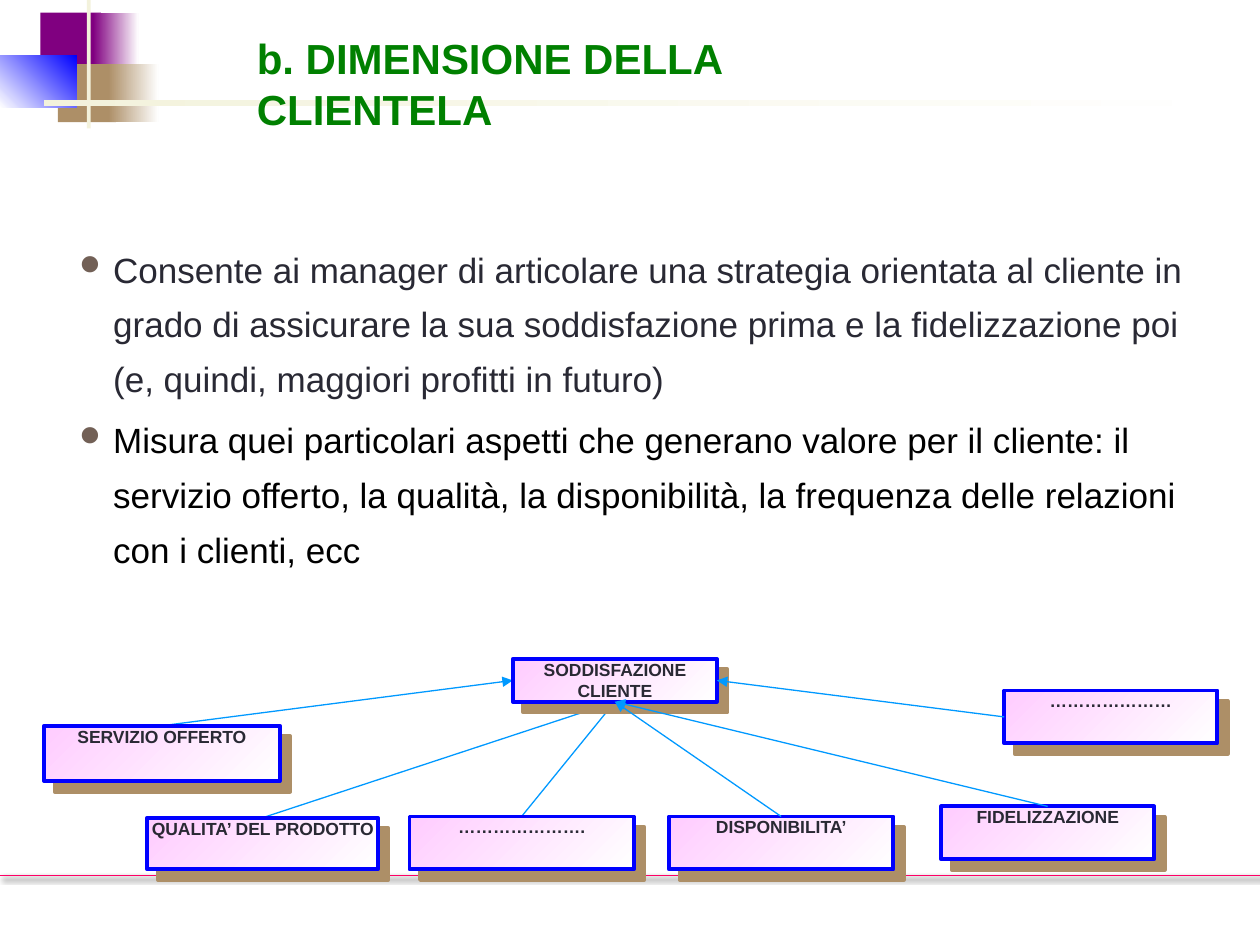
from lxml import etree
from pptx import Presentation
from pptx.dml.color import RGBColor
from pptx.enum import shapes, text
from pptx.oxml import parse_xml
from pptx.oxml.ns import nsdecls, qn
from pptx.util import Inches, Pt

TITLE = "b. DIMENSIONE DELLA CLIENTELA"
POINTS = [
    ("Consente ai manager di articolare una strategia orientata al cliente in grado di "
     "assicurare la sua soddisfazione prima e la fidelizzazione poi (e, quindi, maggiori "
     "profitti in futuro)", "292934", 0),
    ("Misura quei particolari aspetti che generano valore per il cliente: il servizio "
     "offerto, la qualità, la disponibilità, la frequenza delle relazioni con i clienti, ecc",
     "000000", 4),
]
# left, top, width, height, fill colours, gradient angle (clockwise)
ORNAMENTS = [
    (0.32, 0.1, 0.48, 0.46, ["800080"], 0),
    (0.74, 0.1, 0.36, 0.46, ["800080", "FFFFFF"], 0),
    (0.46, 0.51, 0.46, 0.46, ["AD8F67"], 0),
    (0.86, 0.51, 0.4, 0.46, ["AD8F67", "FFFFFF"], 0),
    (0, 0.44, 0.61, 0.41, ["FFFFFF", "0000FF"], 315),
    (0.69, 0, 0.03, 1.02, ["F3F2DC"], 0),
    (0.35, 0.79, 9.51, 0.05, ["F3F2DC", "FFFFFF"], 0),
]
GOAL = ("SODDISFAZIONE CLIENTE", 4.07, 5.23, 1.62, 0.34)
SERVICE = ("SERVIZIO OFFERTO", 0.35, 5.76, 1.87, 0.44)
QUALITY = ("QUALITA’ DEL PRODOTTO", 1.17, 6.49, 1.83, 0.41)
OPEN_LOW = ("………………….", 3.25, 6.48, 1.78, 0.42)
AVAILABILITY = ("DISPONIBILITA’", 5.31, 6.48, 1.78, 0.42)
LOYALTY = ("FIDELIZZAZIONE", 7.47, 6.4, 1.69, 0.42)
OPEN_HIGH = ("…………………", 7.97, 5.48, 1.69, 0.42)
FACTORS = [SERVICE, QUALITY, OPEN_LOW, AVAILABILITY, LOYALTY, OPEN_HIGH]


def rgb(colour):
    return RGBColor.from_string(colour)


def set_font(paragraph, size, colour, bold=False):
    font = paragraph.font
    font.name, font.size, font.bold = "Arial", Pt(size), bold
    font.color.rgb = rgb(colour)


def add_effects(shape, shadow=None):
    """Set the effect list: empty, or a shadow (colour, opacity %, blur, distance in points)."""
    properties = shape._element.spPr
    for old in properties.findall(qn("a:effectLst")):
        properties.remove(old)
    effects = etree.SubElement(properties, qn("a:effectLst"))
    if shadow:
        colour, opacity, blur, distance = shadow
        effects.append(parse_xml(
            f'<a:outerShdw {nsdecls("a")} blurRad="{Pt(blur)}" dist="{Pt(distance)}" '
            f'dir="2700000" algn="tl" rotWithShape="0"><a:srgbClr val="{colour}">'
            f'<a:alpha val="{opacity * 1000}"/></a:srgbClr></a:outerShdw>'))


def add_rect(slide, left, top, width, height, colours, angle):
    rect = slide.shapes.add_shape(shapes.MSO_SHAPE.RECTANGLE, *map(Inches, (left, top, width, height)))
    rect.shadow.inherit = False
    rect.line.fill.background()
    if len(colours) == 1:
        rect.fill.solid()
        rect.fill.fore_color.rgb = rgb(colours[0])
    else:
        rect.fill.gradient()
        rect.fill.gradient_angle = (360 - angle) % 360
        for stop, colour, position in zip(rect.fill.gradient_stops, colours, (0, 1)):
            stop.color.rgb = rgb(colour)
            stop.position = position
    return rect


def add_line(slide, start, end, colour, shadow=None, arrow=False):
    line = slide.shapes.add_connector(shapes.MSO_CONNECTOR.STRAIGHT, *map(Inches, start + end))
    line.line.color.rgb = rgb(colour)
    line.line.width = Pt(0.75)
    if arrow:
        etree.SubElement(line.line._get_or_add_ln(), qn("a:tailEnd"), type="triangle")
    add_effects(line, shadow)


def add_box(slide, label, *place):
    box = add_rect(slide, *place, ["FFCCFF", "FFFFFF"], 45)
    box.line.color.rgb = rgb("0000FF")
    box.line.width = Pt(2.25)
    add_effects(box, ("AD8F67", 100, 0, 8.5))
    frame = box.text_frame
    frame.margin_left = frame.margin_right = frame.margin_top = frame.margin_bottom = 0
    frame.vertical_anchor = text.MSO_ANCHOR.TOP
    frame.word_wrap = True
    paragraph = frame.paragraphs[0]
    paragraph.text = label
    paragraph.alignment = text.PP_ALIGN.CENTER
    set_font(paragraph, 10, "292934", True)


def add_text_frame(slide, *place):
    frame = slide.shapes.add_textbox(*map(Inches, place)).text_frame
    frame.word_wrap = True
    return frame


def add_bullet(paragraph):
    properties = paragraph._p.get_or_add_pPr()
    properties.set("marL", str(Inches(0.3)))
    properties.set("indent", str(-Inches(0.3)))
    colour = etree.SubElement(properties, qn("a:buClr"))
    etree.SubElement(colour, qn("a:srgbClr"), val="726056")
    etree.SubElement(properties, qn("a:buChar"), char="⚫")


def top_centre(box):
    _, left, top, width, _ = box
    return left + width / 2, top


def add_arrows(slide, arrows):
    for start, end in arrows:
        add_line(slide, start, end, "0099FF", arrow=True)


def main():
    deck = Presentation()
    deck.slide_width, deck.slide_height = Inches(10), Inches(7.5)
    slide = deck.slides.add_slide(deck.slide_layouts[6])

    for ornament in ORNAMENTS:
        add_rect(slide, *ornament)
    add_line(slide, (0, 6.95), (10, 6.95), "FF0066", shadow=("000000", 60, 3, 2))

    title = add_text_frame(slide, 1.94, 0.21, 4.87, 0.5).paragraphs[0]
    title.text = TITLE
    set_font(title, 24, "008000", True)

    body = add_text_frame(slide, 0.5, 1.82, 9, 3.08)
    for index, (point, colour, space) in enumerate(POINTS):
        paragraph = body.add_paragraph() if index else body.paragraphs[0]
        paragraph.text = point
        add_bullet(paragraph)
        paragraph.line_spacing = 1.3
        paragraph.space_before = Pt(space)
        set_font(paragraph, 20, colour)

    _, left, top, width, height = GOAL
    middle = top + height / 2
    goal_left, goal_right = (left, middle), (left + width, middle)
    goal_bottom = (left + width / 2, top + height)
    add_arrows(slide, [(top_centre(SERVICE), goal_left),
                       (top_centre(QUALITY), goal_bottom),
                       (top_centre(OPEN_LOW), goal_bottom)])
    for box in FACTORS + [GOAL]:
        add_box(slide, *box)
    _, left, top, _, height = OPEN_HIGH
    add_arrows(slide, [(top_centre(LOYALTY), goal_bottom),
                       ((left, top + height / 2), goal_right),
                       (top_centre(AVAILABILITY), goal_bottom)])
    deck.save("out.pptx")


if __name__ == "__main__":
    main()
